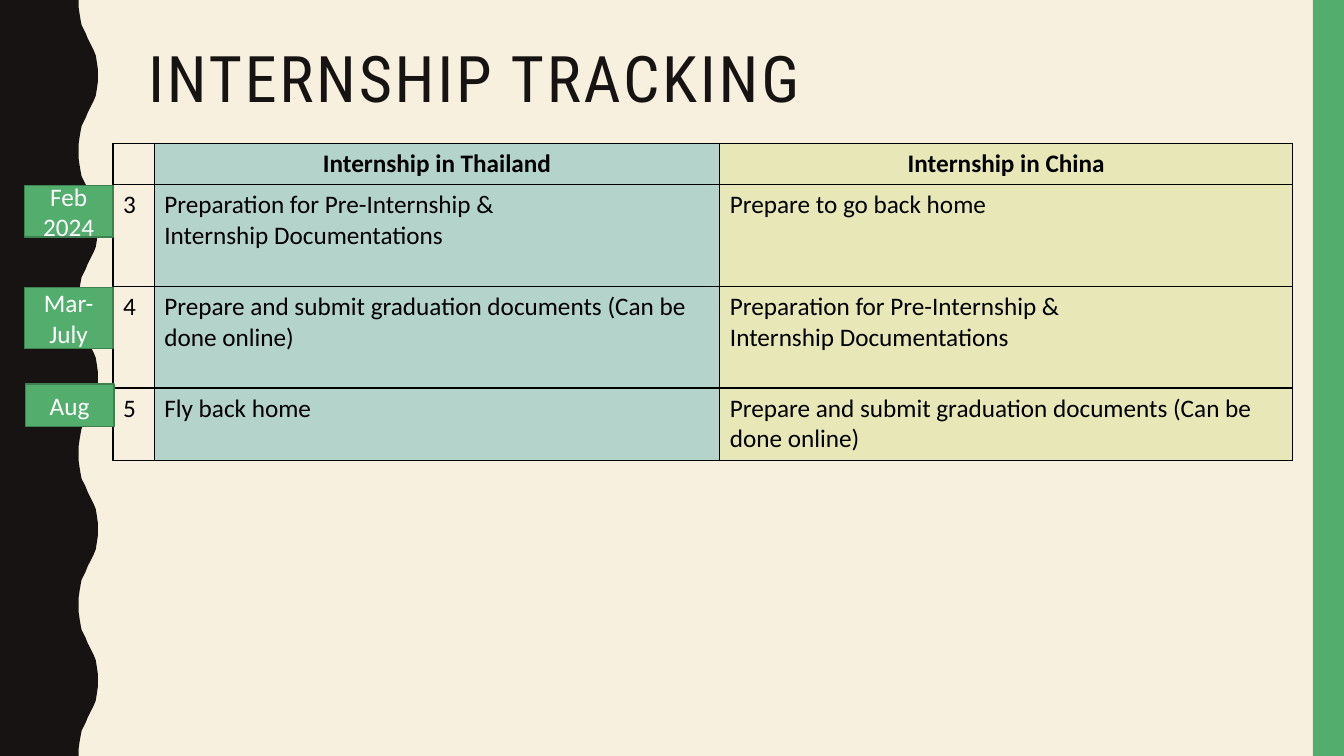
from lxml import etree
from pptx import Presentation
from pptx.dml.color import RGBColor
from pptx.enum.shapes import MSO_SHAPE as Shape
from pptx.enum.text import MSO_ANCHOR as Anchor, MSO_AUTO_SIZE as AutoSize, PP_ALIGN as Align
from pptx.oxml.ns import qn
from pptx.util import Inches, Pt

CREAM, BLACK, INK, WHITE = "F7F0DF", "000000", "171312", "FFFFFF"
GREEN, DARK_GREEN = "53AE6E", "3D8151"
COLUMN_FILLS = [None, "B3D3CB", "E8E7B7"]
COLUMN_WIDTHS = [0.41, 5.61, 5.68]
ROW_HEIGHTS = [0.41, 1.01, 1.01, 0.72]

PREPARE = "Preparation for Pre-Internship &\nInternship Documentations"
SUBMIT = "Prepare and submit graduation documents (Can be done online)"
ROWS = [
    ["", "Internship in Thailand", "Internship in China"],
    ["3", PREPARE, "Prepare to go back home"],
    ["4", SUBMIT, PREPARE],
    ["5", "Fly back home", SUBMIT],
]
# text, left, top, height
MONTHS = [
    ("Feb 2024", 0.24, 1.84, 0.51),
    ("Mar-July", 0.24, 2.85, 0.61),
    ("Aug", 0.25, 3.81, 0.42),
]

# Rising half of one wave of the left edge, as (x, y)
WAVE_LENGTH = 1.5
HALF_WAVE = [
    (0.78, 0), (0.78, 0.07), (0.79, 0.14), (0.8, 0.2), (0.81, 0.25),
    (0.83, 0.29), (0.85, 0.33), (0.87, 0.38), (0.89, 0.42), (0.91, 0.46),
    (0.93, 0.5), (0.95, 0.55), (0.96, 0.61), (0.97, 0.68), (0.97, 0.75),
]


def color(value):
    return RGBColor.from_string(value)


def format_text(frame, size, font, fill, align=Align.LEFT, bold=False):
    for para in frame.paragraphs:
        para.alignment = align
        for span in para.runs:
            span.font.size = Pt(size)
            span.font.name = font
            span.font.bold = bold
            span.font.color.rgb = color(fill)


def paint(shape, fill, line=None):
    shape.shadow.inherit = False
    shape.fill.solid()
    shape.fill.fore_color.rgb = color(fill)
    if line:
        shape.line.color.rgb = color(line)
        shape.line.width = Pt(1)
    else:
        shape.line.fill.background()


def add_rectangle(page, left, top, width, height, fill, line=None):
    box = page.shapes.add_shape(Shape.RECTANGLE, Inches(left), Inches(top),
                                Inches(width), Inches(height))
    paint(box, fill, line)
    return box


def add_wavy_edge(page):
    falling = [(x, WAVE_LENGTH - y) for x, y in reversed(HALF_WAVE[:-1])]
    wave = HALF_WAVE + falling[:-1]
    points = [(x, y + number * WAVE_LENGTH) for number in range(5) for x, y in wave]
    points += [(0.78, 7.5), (0, 7.5)]
    builder = page.shapes.build_freeform(0, 0)
    builder.add_line_segments([(Inches(x), Inches(y)) for x, y in points], close=True)
    paint(builder.convert_to_shape(), INK)


def set_title(page, text):
    title = page.shapes.title
    title.left, title.top = Inches(1.37), Inches(0.42)
    title.width, title.height = Inches(11.13), Inches(0.51)
    frame = title.text_frame
    frame.text = text
    frame.word_wrap = True
    frame.auto_size = AutoSize.NONE
    frame.vertical_anchor = Anchor.TOP
    format_text(frame, 45.9, "Roboto Condensed", INK)
    para = frame.paragraphs[0]
    para.line_spacing = 0.9
    para.runs[0].font._element.set("spc", "200")


def add_borders(cell):
    properties = cell._tc.get_or_add_tcPr()
    for side in ("lnL", "lnR", "lnT", "lnB"):
        line = etree.SubElement(properties, qn(f"a:{side}"), w=str(Pt(1)))
        fill = etree.SubElement(line, qn("a:solidFill"))
        etree.SubElement(fill, qn("a:srgbClr"), val=BLACK)


def add_tracking_table(page):
    table = page.shapes.add_table(len(ROWS), len(COLUMN_WIDTHS), Inches(1.12), Inches(1.42),
                                  Inches(sum(COLUMN_WIDTHS)), Inches(sum(ROW_HEIGHTS))).table
    table.first_row = table.horz_banding = False
    for column, width in zip(table.columns, COLUMN_WIDTHS):
        column.width = Inches(width)
    for row, height in zip(table.rows, ROW_HEIGHTS):
        row.height = Inches(height)
    for row_index, texts in enumerate(ROWS):
        header = row_index == 0
        for column_index, text in enumerate(texts):
            cell = table.cell(row_index, column_index)
            cell.text = text
            format_text(cell.text_frame, 18, "Calibri", BLACK,
                        Align.CENTER if header else Align.LEFT, header)
            add_borders(cell)
            fill = COLUMN_FILLS[column_index]
            if fill:
                cell.fill.solid()
                cell.fill.fore_color.rgb = color(fill)
            else:
                cell.fill.background()


def add_month(page, text, left, top, height):
    box = add_rectangle(page, left, top, 0.88, height, GREEN, DARK_GREEN)
    frame = box.text_frame
    frame.text = text
    frame.word_wrap = True
    frame.vertical_anchor = Anchor.MIDDLE
    format_text(frame, 18, "Calibri", WHITE, Align.CENTER)


def main():
    deck = Presentation()
    deck.slide_width, deck.slide_height = Inches(13.33), Inches(7.5)
    page = deck.slides.add_slide(deck.slide_layouts[5])

    # Background and side decoration
    page.background.fill.solid()
    page.background.fill.fore_color.rgb = color(CREAM)
    add_wavy_edge(page)
    add_rectangle(page, 13.02, 0, 0.31, 7.5, GREEN)

    # Title, table and month labels
    set_title(page, "INTERNSHIP TRACKING")
    add_tracking_table(page)
    for month in MONTHS:
        add_month(page, *month)

    deck.save("out.pptx")


if __name__ == "__main__":
    main()
